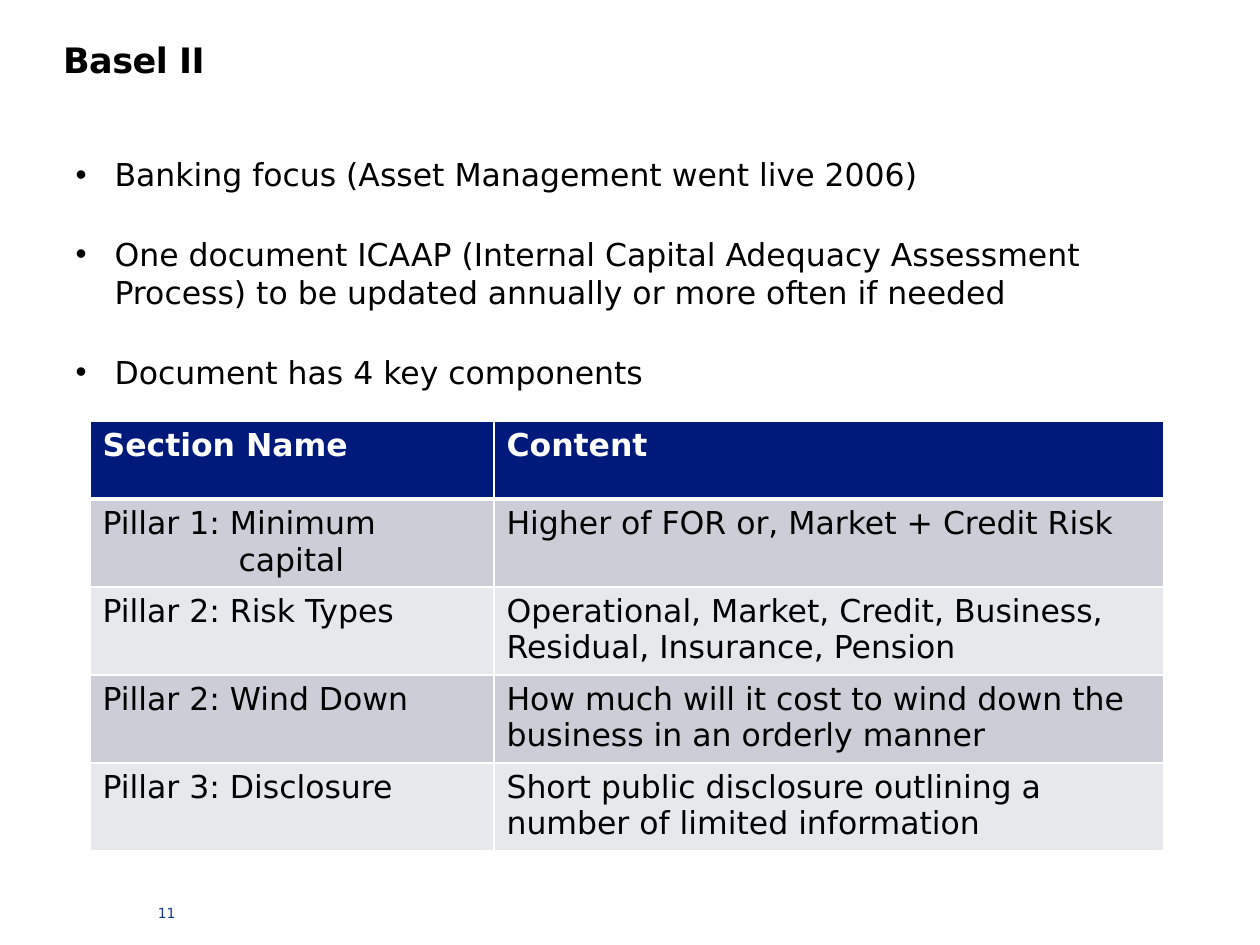
from lxml import etree
from pptx import Presentation
from pptx.dml.color import RGBColor
from pptx.enum.text import MSO_ANCHOR, MSO_AUTO_SIZE, PP_ALIGN
from pptx.oxml.ns import qn
from pptx.util import Pt

LEFT = PP_ALIGN.LEFT
TOP = MSO_ANCHOR.TOP
NO_FIT = MSO_AUTO_SIZE.NONE

BLACK = RGBColor(0x00, 0x00, 0x00)
WHITE = RGBColor(0xFF, 0xFF, 0xFF)
NAVY = RGBColor(0x00, 0x1A, 0x7B)
NUMBER_BLUE = RGBColor(0x19, 0x39, 0x89)
BAND_DARK = RGBColor(0xCC, 0xCD, 0xD7)
BAND_LIGHT = RGBColor(0xE7, 0xE8, 0xEC)

BULLETS = [
    "Banking focus (Asset Management went live 2006)",
    "One document ICAAP (Internal Capital Adequacy Assessment Process) "
    "to be updated annually or more often if needed",
    "Document has 4 key components",
]
SECTIONS = [
    ("Section Name", "Content"),
    ("Pillar 1: Minimum capital", "Higher of FOR or, Market + Credit Risk"),
    ("Pillar 2: Risk Types",
     "Operational, Market, Credit, Business, Residual, Insurance, Pension"),
    ("Pillar 2: Wind Down",
     "How much will it cost to wind down the business in an orderly manner"),
    ("Pillar 3: Disclosure",
     "Short public disclosure outlining a number of limited information"),
]


def px(n):
    return round(n * 914400 / 126)


class SlideBuilder:
    font = "DejaVu Sans"

    def __init__(self, slide):
        self.slide = slide

    def place(self, shape, x, y, w, h):
        shape.left, shape.top, shape.width, shape.height = map(px, (x, y, w, h))

    def set_text(self, p, text, size, color, bold=False, tracking=None):
        """Fill one paragraph; tracking is in hundredths of a point."""
        r = p.add_run()
        r.text = text
        if tracking:
            r._r.get_or_add_rPr().set("spc", str(tracking))
        p.alignment = LEFT
        p.font.name = self.font
        p.font.size = Pt(size)
        p.font.bold = bold
        p.font.color.rgb = color

    def hang(self, p, indent):
        pPr = p._p.get_or_add_pPr()
        pPr.set("marL", str(px(indent)))
        pPr.set("indent", str(-px(indent)))

    def plain_frame(self, shape):
        """Return the text frame, top-anchored and without insets."""
        tf = shape.text_frame
        tf.word_wrap = True
        tf.auto_size = NO_FIT
        tf.vertical_anchor = TOP
        tf.margin_left = tf.margin_top = tf.margin_right = tf.margin_bottom = 0
        return tf

    def title(self, text, *box):
        s = self.slide.shapes.title
        self.place(s, *box)
        tf = self.plain_frame(s)
        self.set_text(tf.paragraphs[0], text, 20, BLACK, True, -30)

    def bullets(self, items, *box):
        s = self.slide.placeholders[1]
        self.place(s, *box)
        tf = s.text_frame
        tf.auto_size = NO_FIT
        for i, item in enumerate(items):
            p = tf.add_paragraph() if i else tf.paragraphs[0]
            self.hang(p, 39)
            p.space_before = Pt(12 if i else 0)
            p.space_after = Pt(12)
            self.set_text(p, item, 18, BLACK)

    def page_number(self, text, *box):
        s = self.slide.shapes.add_textbox(*map(px, box))
        tf = self.plain_frame(s)
        self.set_text(tf.paragraphs[0], text, 8, NUMBER_BLUE, tracking=-10)

    def borders(self, cell, widths):
        """Draw white borders; widths in points for left, right, top, bottom."""
        tcPr = cell._tc.get_or_add_tcPr()
        for side, width in zip("LRTB", widths):
            ln = etree.SubElement(tcPr, qn(f"a:ln{side}"), w=str(Pt(width)))
            fill = etree.SubElement(ln, qn("a:solidFill"))
            etree.SubElement(fill, qn("a:srgbClr"), val=str(WHITE))

    def table(self, rows, x, y, col_widths, row_heights):
        table = self.slide.shapes.add_table(
            len(rows), len(col_widths), px(x), px(y),
            px(sum(col_widths)), px(sum(row_heights))).table
        for col, width in zip(table.columns, col_widths):
            col.width = px(width)
        for i, (texts, height) in enumerate(zip(rows, row_heights)):
            table.rows[i].height = px(height)
            header = i == 0
            band = BAND_DARK if i % 2 else BAND_LIGHT
            for j, text in enumerate(texts):
                cell = table.cell(i, j)
                self.borders(cell, (1, 1, 3 if i == 1 else 1, 3 if header else 1))
                cell.fill.solid()
                cell.fill.fore_color.rgb = NAVY if header else band
                self.set_text(cell.text_frame.paragraphs[0], text, 18,
                              WHITE if header else BLACK, header)
        return table


def main():
    prs = Presentation()
    prs.slide_width, prs.slide_height = px(1260), px(945)
    b = SlideBuilder(prs.slides.add_slide(prs.slide_layouts[1]))
    b.title("Basel II", 63, 38, 950, 101)
    b.bullets(BULLETS, 63, 149, 1073, 251)
    b.page_number("11", 158, 905, 179, 26)
    table = b.table(SECTIONS, 90, 421, (404, 670), (78, 88, 88, 88, 88))
    b.hang(table.cell(1, 0).text_frame.paragraphs[0], 136)
    prs.save("out.pptx")


if __name__ == "__main__":
    main()
